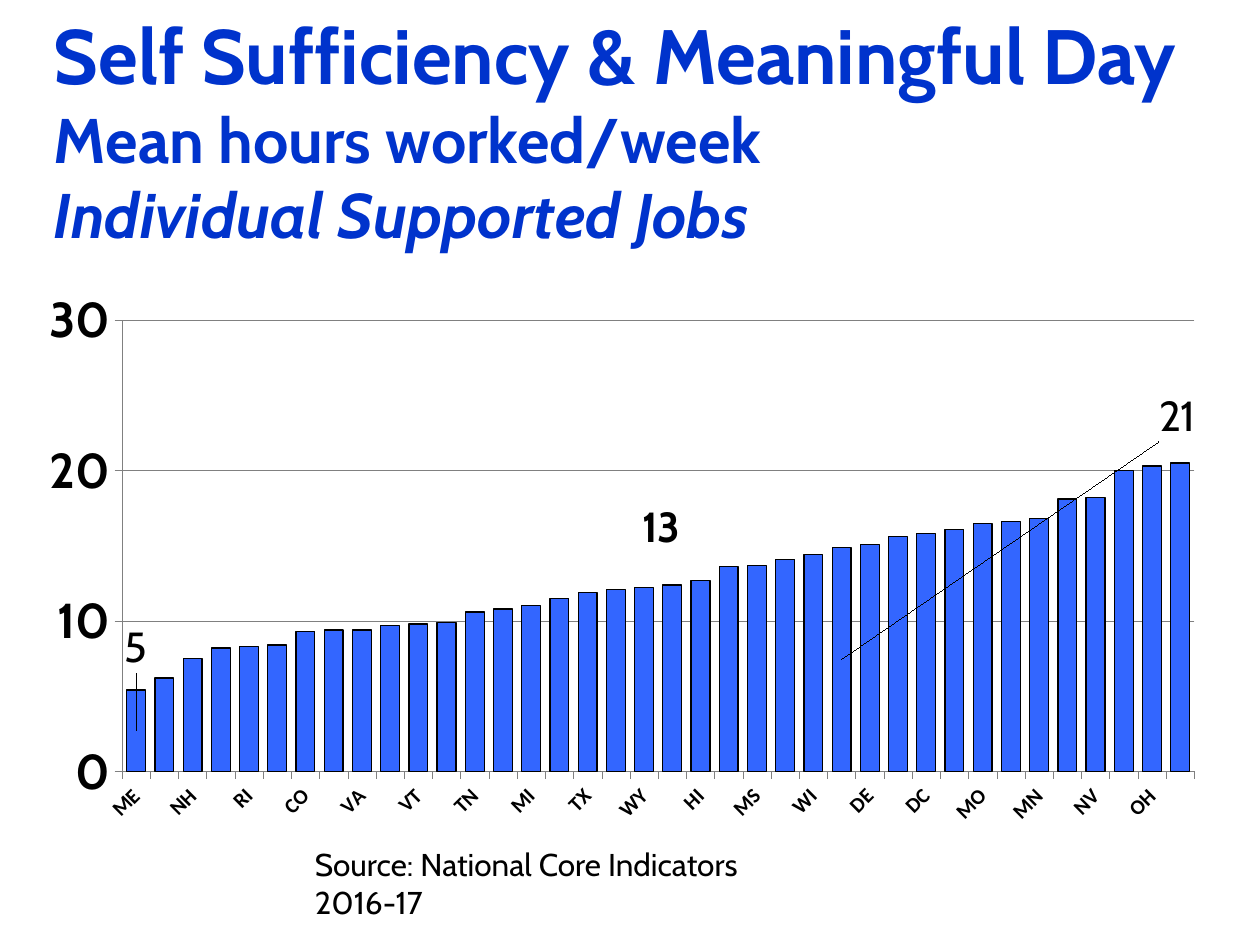
from dataclasses import dataclass

from lxml import etree
from pptx import Presentation
from pptx.chart.data import CategoryChartData
from pptx.dml.color import RGBColor
from pptx.enum.chart import XL_CHART_TYPE, XL_TICK_MARK
from pptx.enum.text import MSO_ANCHOR, MSO_AUTO_SIZE
from pptx.oxml import parse_xml
from pptx.util import Inches, Pt

STACKED = XL_CHART_TYPE.COLUMN_STACKED
TICK_OUT, TICK_NONE = XL_TICK_MARK.OUTSIDE, XL_TICK_MARK.NONE
MIDDLE, TOP = MSO_ANCHOR.MIDDLE, MSO_ANCHOR.TOP
NO_FIT, GROW = MSO_AUTO_SIZE.NONE, MSO_AUTO_SIZE.SHAPE_TO_FIT_TEXT

HEADING_FONT, CHART_FONT = "Cabin", "Calibri"
BLACK, TITLE_BLUE, BAR_BLUE, GREY = "000000", "0033CC", "3366FF", "808080"
C_NS = "http://schemas.openxmlformats.org/drawingml/2006/chart"
C15_NS = "http://schemas.microsoft.com/office/drawing/2012/chart"

STATES = ("ME KY NH AL RI NC CO UT VA ID VT NE TN KS MI SD TX AR WY CT HI NY MS "
          "OK WI GA DE FL DC IN MO PA MN IL NV LA OH NJ").split()
HOURS = [5.4, 6.2, 7.5, 8.2, 8.3, 8.4, 9.3, 9.4, 9.4, 9.7, 9.8, 9.9, 10.6,
         10.8, 11, 11.5, 11.9, 12.1, 12.2, 12.4, 12.7, 13.6, 13.7, 14.1, 14.4,
         14.9, 15.1, 15.6, 15.8, 16.1, 16.5, 16.6, 16.8, 18.1, 18.2, 20, 20.3,
         20.5]


@dataclass
class Line:
    text: str
    size: float
    color: str = BLACK
    bold: bool = False
    italic: bool = False


@dataclass
class TextBlock:
    left: float
    top: float
    width: float
    height: float
    lines: list[Line]
    anchor: MSO_ANCHOR = MIDDLE
    fit: MSO_AUTO_SIZE = NO_FIT


@dataclass
class BarLabel:
    state: str
    text: str
    dx: float  # shift from the bar's centre, as a share of the chart
    dy: float


TEXT_BLOCKS = [
    TextBlock(0.33, 0.83, 9.52, 0.4, [
        Line("Self Sufficiency & Meaningful Day", 44, TITLE_BLUE, True),
        Line("Mean hours worked/week", 36, TITLE_BLUE, True),
        Line("Individual Supported Jobs", 36, TITLE_BLUE, True, True)]),
    TextBlock(2.4, 6.81, 5.48, 0.4, [
        Line("Source: National Core Indicators", 18), Line("2016-17", 18)]),
    TextBlock(5, 3.92, 0.83, 0.5, [Line("13", 24, bold=True)], TOP, GROW),
]
BAR_LABELS = [BarLabel("ME", "5", 0, -0.13), BarLabel("GA", "21", 0.28, -0.38)]


def rgb(hex_color: str) -> RGBColor:
    return RGBColor.from_string(hex_color)


def style_font(font, size: float, name: str, color: str = BLACK,
               bold: bool = False, italic: bool = False) -> None:
    font.size, font.name = Pt(size), name
    font.bold, font.italic = bold, italic
    font.color.rgb = rgb(color)


def style_line(line, color: str, width: float) -> None:
    line.color.rgb = rgb(color)
    line.width = Pt(width)


def manual_layout(*settings: tuple[str, object]):
    layout = parse_xml(f'<c:layout xmlns:c="{C_NS}"><c:manualLayout/></c:layout>')
    for tag, value in settings:
        etree.SubElement(layout[0], f"{{{C_NS}}}{tag}").set("val", str(value))
    return layout


def add_text(slide, block: TextBlock) -> None:
    frame = slide.shapes.add_textbox(
        Inches(block.left), Inches(block.top),
        Inches(block.width), Inches(block.height)).text_frame
    frame.word_wrap = True
    frame.auto_size = block.fit
    frame.vertical_anchor = block.anchor
    paragraph = frame.paragraphs[0]
    for index, line in enumerate(block.lines):
        if index:
            paragraph.add_line_break()
        run = paragraph.add_run()
        run.text = line.text
        style_font(run.font, line.size, HEADING_FONT, line.color,
                   line.bold, line.italic)


def style_axes(chart) -> None:
    states, hours = chart.category_axis, chart.value_axis
    for axis, size, font in ((states, 12, CHART_FONT), (hours, 28, HEADING_FONT)):
        axis.major_tick_mark, axis.minor_tick_mark = TICK_OUT, TICK_NONE
        style_font(axis.tick_labels.font, size, font, bold=True)
        style_line(axis.format.line, GREY, 0.25)
    hours.minimum_scale, hours.maximum_scale, hours.major_unit = 0, 30, 10
    hours.tick_labels.number_format = "0"
    hours.tick_labels.number_format_is_linked = False
    style_line(hours.major_gridlines.format.line, GREY, 0.25)
    # Slanted state names, every second one shown
    states_xml = states._element
    states_xml.find(f"{{{C_NS}}}txPr")[0].set("rot", "-2700000")
    skip = parse_xml(f'<c:tickLblSkip xmlns:c="{C_NS}" val="2"/>')
    states_xml.find(f"{{{C_NS}}}noMultiLvlLbl").addprevious(skip)


def add_bar_labels(series) -> None:
    series.data_labels.show_value = False
    for label in BAR_LABELS:
        data_label = series.points[STATES.index(label.state)].data_label
        run = data_label.text_frame.paragraphs[0].add_run()
        run.text = label.text
        style_font(run.font, 24, HEADING_FONT)
    labels_xml = series.data_labels._element
    for label, label_xml in zip(BAR_LABELS, labels_xml.findall(f"{{{C_NS}}}dLbl")):
        label_xml.insert(1, manual_layout(("x", label.dx), ("y", label.dy)))
    # Leader lines from the bars to the moved labels
    labels_xml.append(parse_xml(
        f'<c:extLst xmlns:c="{C_NS}" xmlns:c15="{C15_NS}">'
        '<c:ext uri="{CE6537A1-D6FC-4f65-9D91-7224C49458BB}">'
        '<c15:showLeaderLines val="1"/></c:ext></c:extLst>'))


def add_hours_chart(slide) -> None:
    data = CategoryChartData(number_format="0")
    data.categories = STATES
    data.add_series("Series 1", HOURS)
    chart = slide.shapes.add_chart(STACKED, Inches(0.14), Inches(2.13),
                                   Inches(9.52), Inches(5.08), data).chart
    chart.has_legend = chart.has_title = False
    style_font(chart.font, 17.9, CHART_FONT)
    style_axes(chart)

    # Bars
    plot = chart.plots[0]
    plot.gap_width, plot.overlap, plot.vary_by_categories = 50, 100, False
    series = plot.series[0]
    series.format.fill.solid()
    series.format.fill.fore_color.rgb = rgb(BAR_BLUE)
    style_line(series.format.line, BLACK, 0.75)
    add_bar_labels(series)

    # Plot area position
    plot_area = chart._chartSpace.chart.plotArea
    for old_layout in plot_area.findall(f"{{{C_NS}}}layout"):
        plot_area.remove(old_layout)
    plot_area.insert(0, manual_layout(
        ("layoutTarget", "inner"), ("xMode", "edge"), ("yMode", "edge"),
        ("x", 0.087), ("y", 0.081), ("w", 0.894), ("h", 0.705)))


def main() -> None:
    deck = Presentation()
    deck.slide_width, deck.slide_height = Inches(10), Inches(7.5)
    slide = deck.slides.add_slide(deck.slide_layouts[6])
    title, *notes = TEXT_BLOCKS
    add_text(slide, title)
    add_hours_chart(slide)
    for note in notes:
        add_text(slide, note)
    deck.save("out.pptx")


if __name__ == "__main__":
    main()
